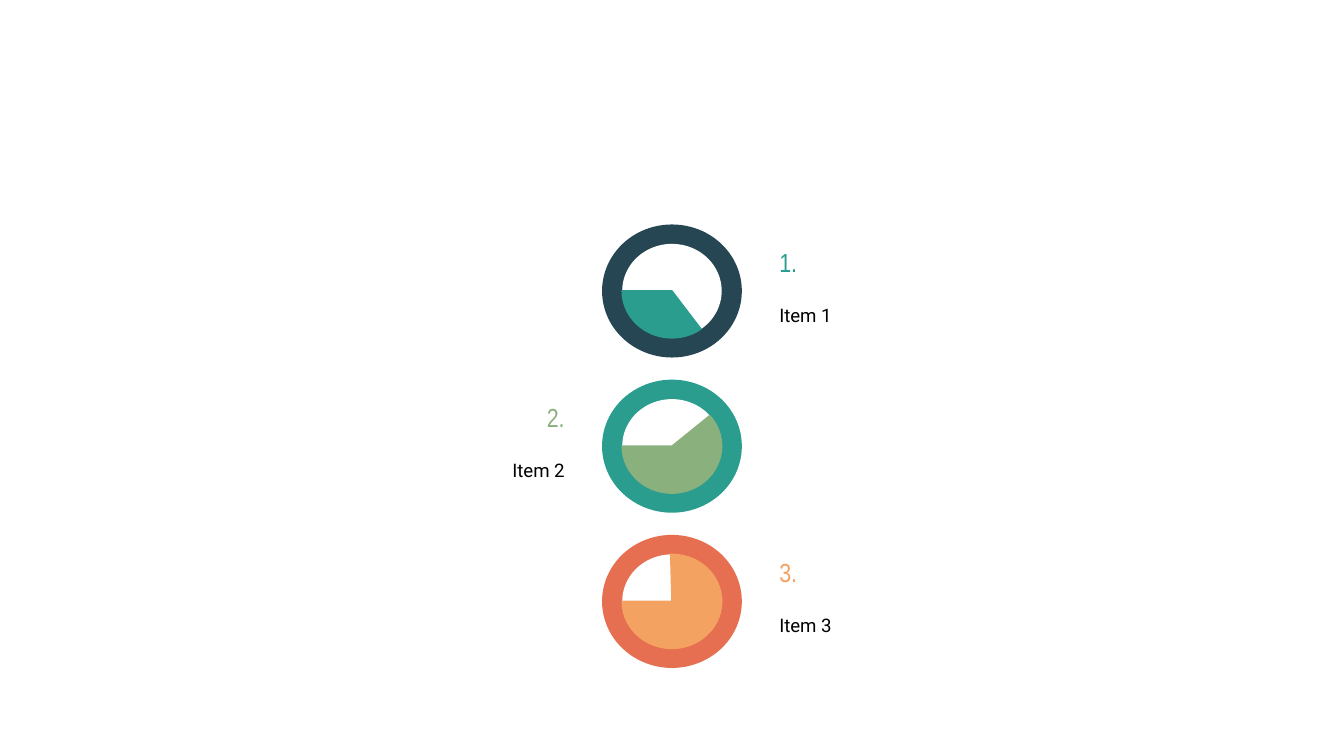
from pptx import Presentation
from pptx.dml.color import RGBColor
from pptx.enum import shapes, text
from pptx.util import Inches, Pt


def rgb(value):
    return RGBColor.from_string(value)


class Deck:
    NUMBER = {"size": Pt(14), "name": "Arial Narrow"}
    LABEL = {"size": Pt(10), "name": "Roboto"}

    def __init__(self, prs):
        self.s = prs.slides.add_slide(prs.slide_layouts[6])

    def disc(self, kind, cx, cy, w, h, color):
        """Add a round shape centred on a point."""
        sp = self.s.shapes.add_shape(kind, Inches(cx - w / 2), Inches(cy - h / 2),
                                     Inches(w), Inches(h))
        sp.shadow.inherit = False
        sp.fill.solid()
        sp.fill.fore_color.rgb = rgb(color)
        sp.line.fill.background()
        return sp

    def pie(self, cx, cy, w, h, color, start, end):
        """Add a wedge running clockwise between two angles in degrees."""
        sp = self.disc(shapes.MSO_SHAPE.PIE, cx, cy, w, h, color)
        for i, angle in enumerate((start, end)):
            sp.adjustments[i] = angle * 0.6  # 60000ths of a degree / 100000
        sp.line.color.rgb = rgb(color)
        sp.line.width = Pt(0.75)

    def text(self, words, x, y, w, h, style, color, align):
        tf = self.s.shapes.add_textbox(Inches(x), Inches(y), Inches(w), Inches(h)).text_frame
        frame = {"word_wrap": True, "vertical_anchor": text.MSO_ANCHOR.MIDDLE}
        for side in ("left", "top", "right", "bottom"):
            frame[f"margin_{side}"] = Inches(0.1)
        for name, value in frame.items():
            setattr(tf, name, value)
        p = tf.paragraphs[0]
        p.alignment = align
        r = p.add_run()
        r.text = words
        for name, value in style.items():
            setattr(r.font, name, value)
        r.font.color.rgb = rgb(color)


def main():
    prs = Presentation()
    prs.slide_width, prs.slide_height = Inches(10), Inches(10 * 9 / 16)
    deck = Deck(prs)

    # Ring colour, wedge colour, wedge start angle
    items = [("264653", "2A9D8F", 52.62),
             ("2A9D8F", "8AB17D", 321.09),
             ("E76F51", "F4A261", 268.4)]
    cx, middle_cy = 5, 3.32
    step = 2.31 / 2  # first to last centre, halved
    gap = 0.7  # from the centre line to the text boxes
    oval = shapes.MSO_SHAPE.OVAL

    for i, (ring, wedge, start) in enumerate(items):
        cy = middle_cy + (i - 1) * step

        # Ring with its partly filled centre
        deck.disc(oval, cx, cy, 1.04, 0.99, ring)
        deck.disc(oval, cx, cy, 0.74, 0.7, "FFFFFF")
        deck.pie(cx, cy, 0.74, 0.7, wedge, start, 180)

        # Number and label, alternating right and left
        on_left = i % 2 == 1
        align = text.PP_ALIGN.RIGHT if on_left else text.PP_ALIGN.LEFT
        for words, dy, w, h, style, color in (
                (f"{i + 1}.", -0.35, 1.1, 0.27, deck.NUMBER, wedge),
                (f"Item {i + 1}", 0, 1.6, 0.36, deck.LABEL, "000000")):
            x = cx - gap - w if on_left else cx + gap
            deck.text(words, x, cy + dy, w, h, style, color, align)

    prs.save("out.pptx")


if __name__ == "__main__":
    main()
